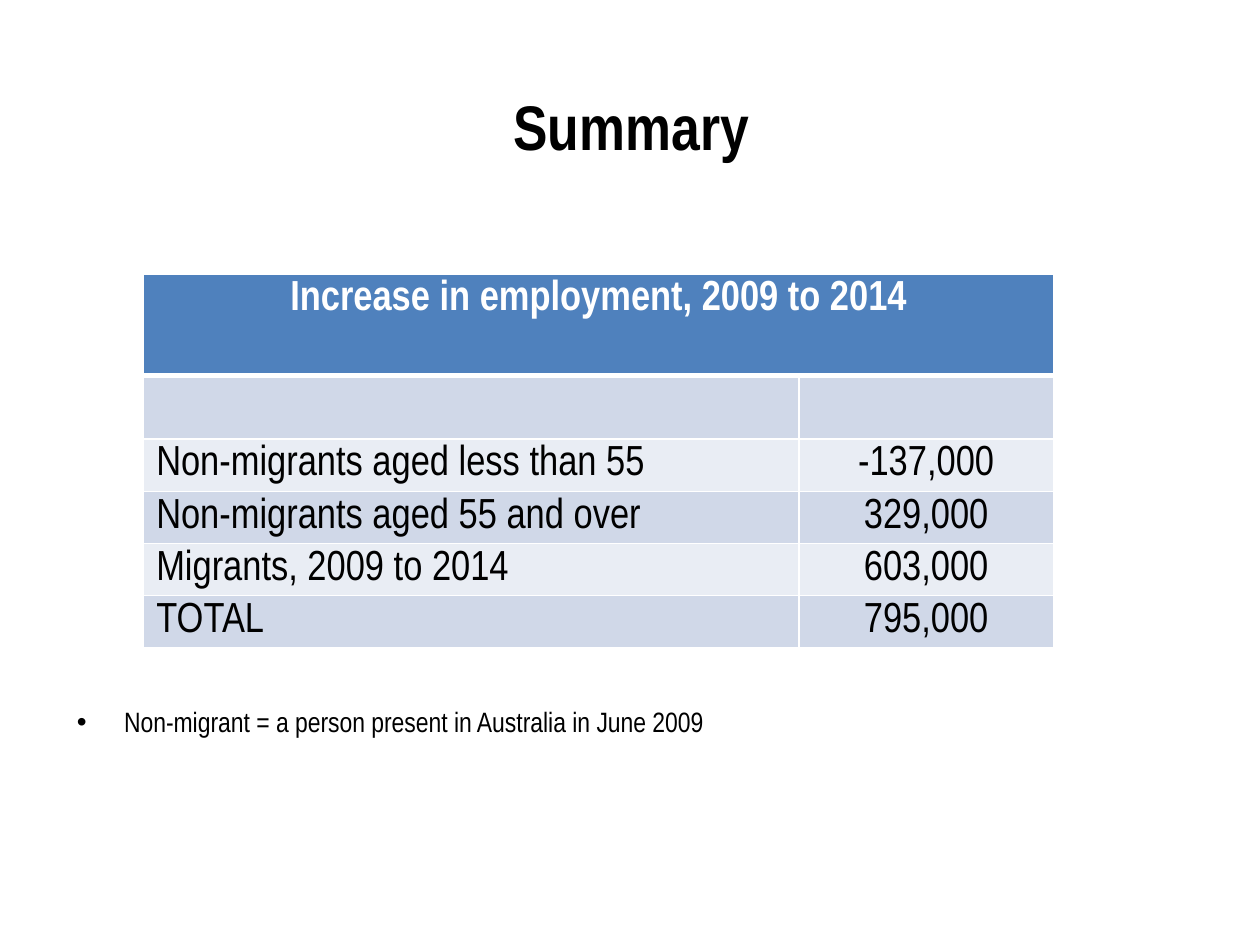
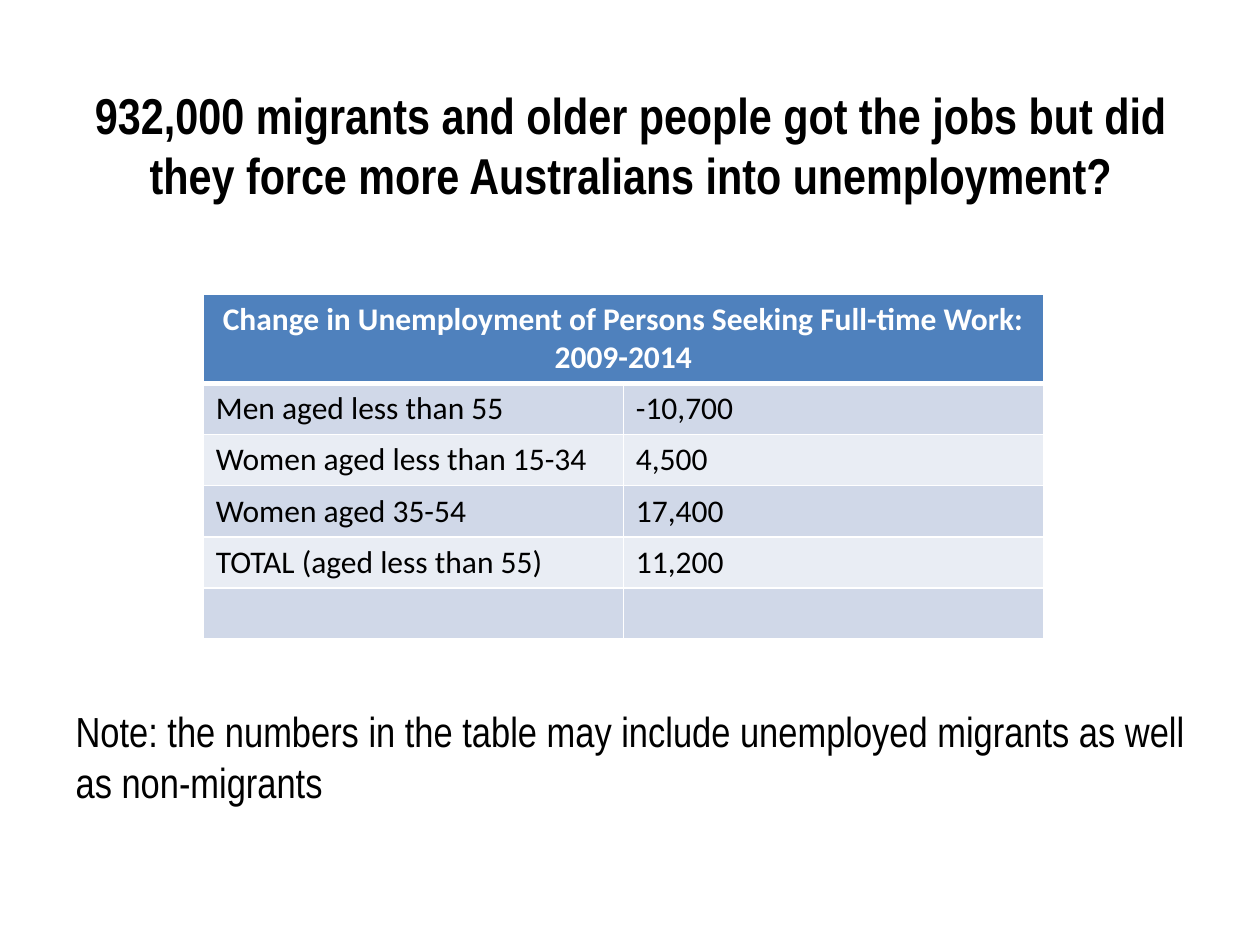
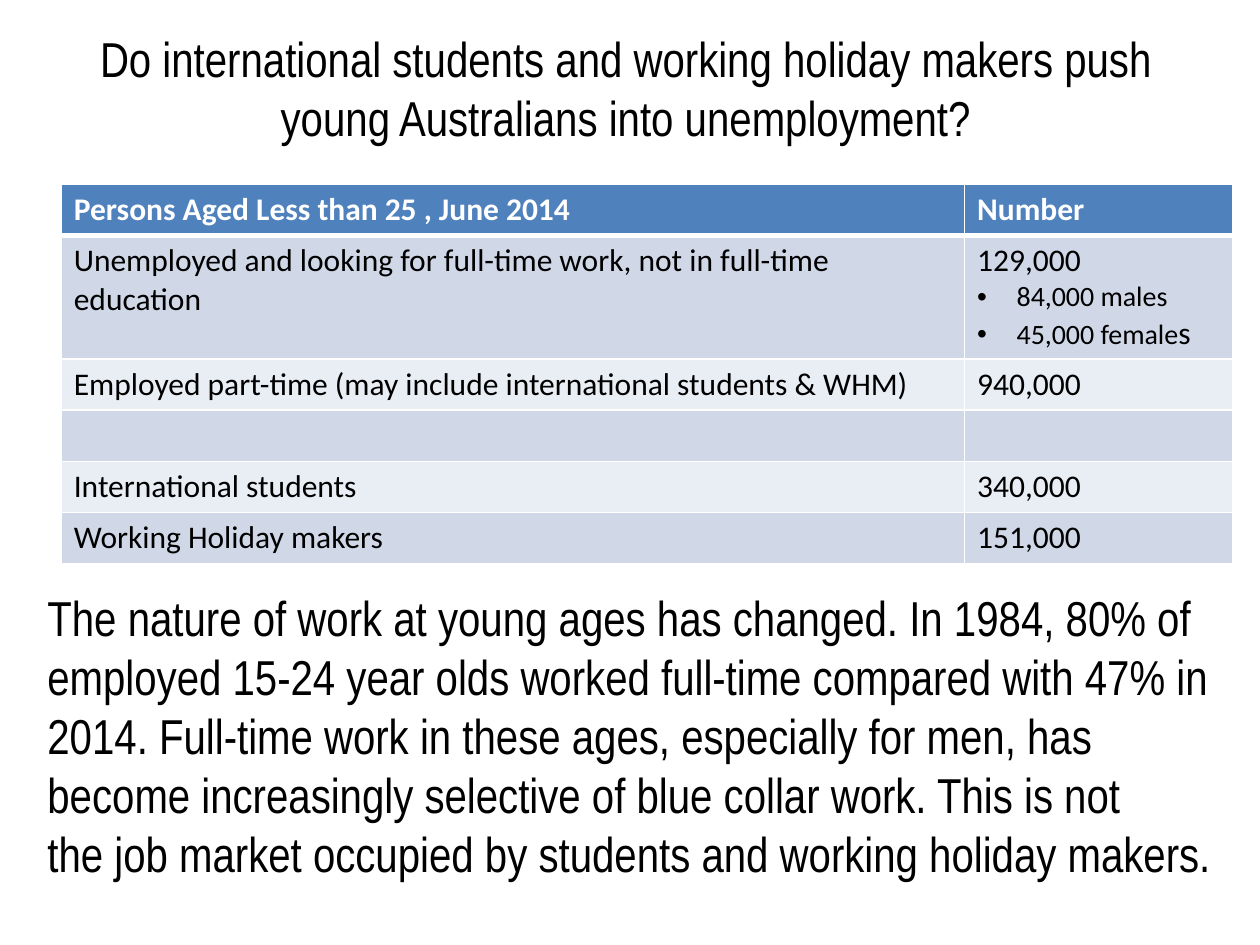
from dataclasses import dataclass
from lxml.etree import SubElement as Sub
from pptx import Presentation
from pptx.dml.color import RGBColor as RGB
from pptx.enum.text import MSO_ANCHOR as Anchor, MSO_AUTO_SIZE as Auto, PP_ALIGN as Align
from pptx.oxml.ns import qn
from pptx.util import Pt


@dataclass(frozen=True)
class Theme:
    ink: str = "000000"
    white: str = "FFFFFF"
    head: str = "4F81BD"
    bands: tuple = ("D0D8E8", "E9EDF4")
    narrow: str = "Arial Narrow"
    plain: str = "Calibri"
    large: float = 36
    medium: float = 28.8
    normal: float = 28
    note: float = 24
    cell: float = 18
    small: float = 16


T = Theme()
LEFT, MID = Align.LEFT, Align.CENTER

PAGES = [
    dict(
        title=dict(text="Summary", box=(36.72, 43.2, 648, 56.88), size=T.large, bold=True),
        body=dict(
            text="Non-migrant = a person present in Australia in June 2009",
            box=(36.72, 88.56, 648, 436.32), drop=314.2, size=T.small, indent=27,
        ),
        table=dict(
            at=(82.1, 156.6), cols=(374.4, 145.44), heights=(57.8,) + (29.8,) * 5,
            rows=[
                ("Increase in employment, 2009 to 2014",),
                ("", ""),
                ("Non-migrants aged less than 55", "-137,000"),
                ("Non-migrants aged 55 and over", "329,000"),
                ("Migrants, 2009 to 2014", "603,000"),
                ("TOTAL", "795,000"),
            ],
            size=T.note, font=T.narrow, aligns=(LEFT, MID), pitch=22.5,
        ),
    ),
    dict(
        title=dict(
            text="932,000 migrants and older people got the jobs but did they force more Australians into unemployment?",
            box=(36.72, 37.44, 648, 90), size=T.medium, bold=True,
        ),
        body=dict(
            text="Note: the numbers in the table may include unemployed migrants as well as non-migrants",
            box=(36, 126, 648, 398.88), drop=277.3, size=T.note,
        ),
        table=dict(
            at=(116.2, 168), cols=(240, 240), heights=(50.4,) + (29.2,) * 5,
            rows=[
                ("Change in Unemployment of Persons Seeking Full-time Work: 2009-2014",),
                ("Men aged less than 55", "-10,700"),
                ("Women aged less than 15-34", "4,500"),
                ("Women aged 35-54", "17,400"),
                ("TOTAL (aged less than 55)", "11,200"),
                ("", ""),
            ],
        ),
    ),
    dict(
        title=dict(
            text="Do international students and working holiday makers push young Australians into unemployment?",
            box=(20, 13.8, 674.64, 72), size=T.normal,
        ),
        table=dict(
            at=(35, 105.3), cols=(516.24, 153.36), heights=(29.2, 70.3) + (29.2,) * 4,
            rows=[
                ("Persons Aged Less than 25 , June 2014", "Number"),
                (
                    "Unemployed and looking for full-time work, not in full-time education",
                    [
                        "129,000",
                        dict(runs=[("84,000 males", T.small)], indent=22.5),
                        dict(runs=[("45,000 female", T.small), ("s", T.cell)], indent=22.5),
                    ],
                ),
                ("Employed part-time (may include international students & WHM)", "940,000"),
                ("", ""),
                ("International students", "340,000"),
                ("Working Holiday makers", "151,000"),
            ],
        ),
        remark=dict(
            text=[
                "The nature of work at young ages has changed. In 1984, 80% of",
                "employed 15-24 year olds worked full-time compared with 47% in",
                "2014. Full-time work in these ages, especially for men, has",
                "become increasingly selective of blue collar work. This is not",
                "the job market occupied by students and working holiday makers.",
            ],
            box=(20, 332.3, 685.44, 177.12), size=T.normal,
        ),
    ),
]


def write(frame, text, size=T.cell, font=T.narrow, color=T.ink, bold=False, align=LEFT,
          indent=0, pitch=None):
    lines = text if isinstance(text, list) else [text]
    for i, line in enumerate(lines):
        if isinstance(line, str):
            line = dict(runs=[(line, size)], indent=indent)
        para = frame.add_paragraph() if i else frame.paragraphs[0]
        para.alignment, para.space_before = align, Pt(0)
        para.line_spacing = Pt(pitch) if pitch else None
        para.font.size = Pt(size)
        props, step = para._p.get_or_add_pPr(), Pt(line["indent"])
        props.set("marL", str(step))
        props.set("indent", str(-step))
        if step:
            Sub(props, qn("a:buFont")).set("typeface", "Arial")
            Sub(props, qn("a:buChar")).set("char", "•")
        else:
            Sub(props, qn("a:buNone"))
        props.append(props.find(qn("a:defRPr")))
        for words, points in line["runs"]:
            if words:
                run = para.add_run()
                run.text = words
                run.font.size, run.font.name, run.font.bold = Pt(points), font, bold
                run.font.color.rgb = RGB.from_string(color)


def place(shape, box):
    shape.left, shape.top, shape.width, shape.height = map(Pt, box)


def edge(cell, head):
    props = cell._tc.get_or_add_tcPr()
    for side in "LRTB":
        line = Sub(props, qn(f"a:ln{side}"), w=str(Pt(3 if head and side == "B" else 1)))
        Sub(Sub(line, qn("a:solidFill")), qn("a:srgbClr")).set("val", T.white)


def grid(slide, at, cols, heights, rows, size=T.cell, font=T.plain, aligns=(LEFT, LEFT), pitch=None):
    spot = map(Pt, (*at, sum(cols), sum(heights)))
    table = slide.shapes.add_table(len(rows), len(cols), *spot).table
    for col, width in zip(table.columns, cols):
        col.width = Pt(width)
    for r, (row, height) in enumerate(zip(rows, heights)):
        table.rows[r].height = Pt(height)
        head, span = r == 0, len(row) < len(cols)
        if span:
            table.cell(r, 0).merge(table.cell(r, len(cols) - 1))
        for c in range(len(cols)):
            cell = table.cell(r, c)
            edge(cell, head)
            cell.fill.solid()
            cell.fill.fore_color.rgb = RGB.from_string(T.head if head else T.bands[(r - 1) % 2])
            if c < len(row):
                write(cell.text_frame, row[c], size=size, font=font, bold=head, pitch=pitch,
                      color=T.white if head else T.ink, align=MID if span else aligns[c])


def title(slide, text, box, **form):
    shape = slide.shapes.title
    place(shape, box)
    frame = shape.text_frame
    frame.auto_size, frame.vertical_anchor = Auto.NONE, Anchor.MIDDLE
    write(frame, text, align=MID, **form)


def body(slide, text, box, drop, **form):
    shape = slide.placeholders[1]
    place(shape, box)
    frame = shape.text_frame
    frame.auto_size, frame.margin_top = Auto.NONE, Pt(drop)
    write(frame, text, **form)


def remark(slide, text, box, **form):
    frame = slide.shapes.add_textbox(*map(Pt, box)).text_frame
    frame.word_wrap, frame.auto_size = False, Auto.SHAPE_TO_FIT_TEXT
    write(frame, text, **form)


def main():
    deck = Presentation()
    deck.slide_width, deck.slide_height = Pt(720), Pt(540)
    draw = dict(title=title, body=body, table=grid, remark=remark)
    for page in PAGES:
        slide = deck.slides.add_slide(deck.slide_layouts[1 if "body" in page else 5])
        for part, data in page.items():
            draw[part](slide, **data)
    deck.save("out.pptx")


if __name__ == "__main__":
    main()
